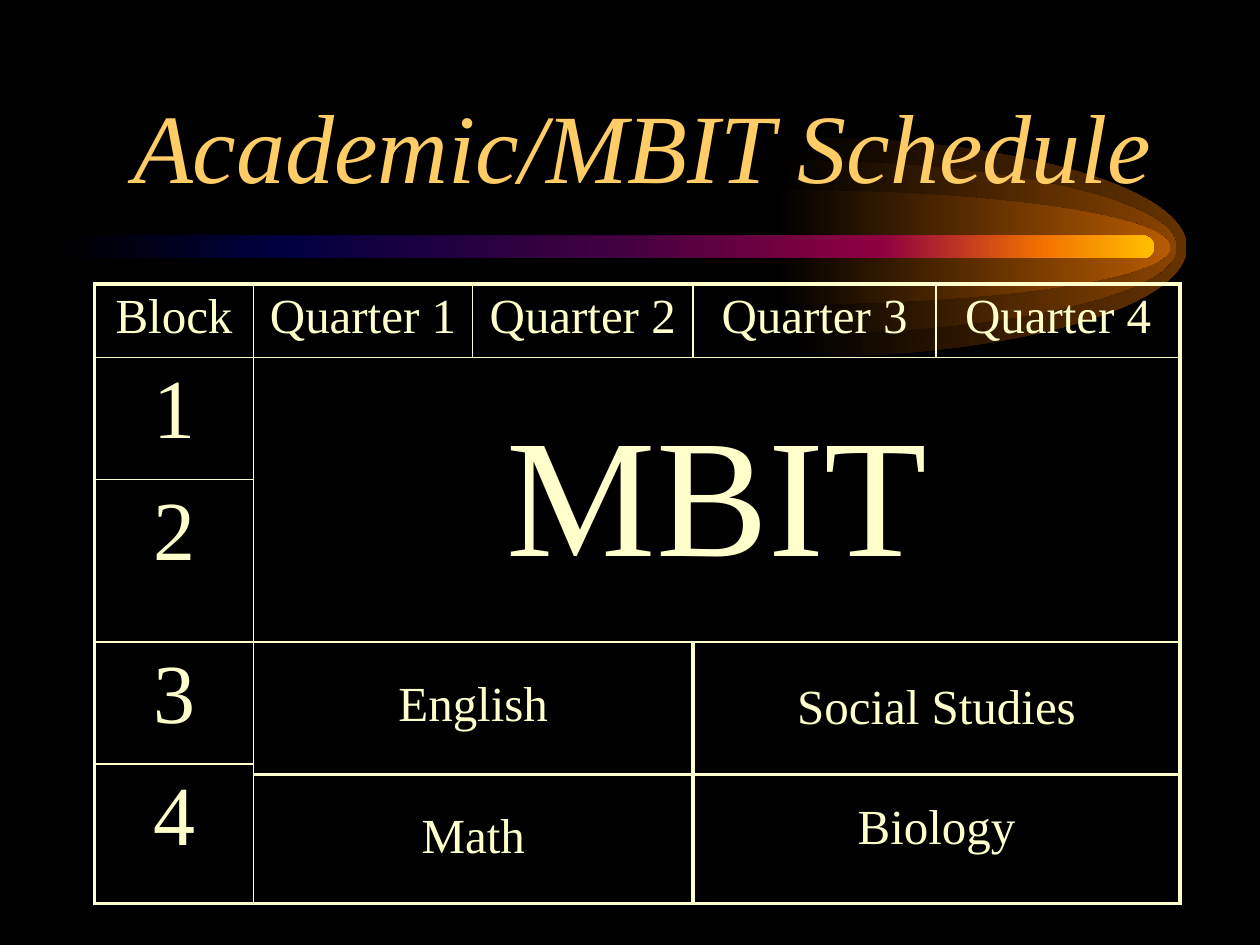
from lxml.etree import SubElement
from pptx import Presentation
from pptx.dml.color import RGBColor
from pptx.enum.shapes import MSO_SHAPE
from pptx.enum.text import MSO_ANCHOR, PP_ALIGN
from pptx.oxml.ns import qn
from pptx.util import Pt

BLACK = RGBColor(0x00, 0x00, 0x00)
GOLD = RGBColor(0xFF, 0xCC, 0x66)
CREAM = RGBColor(0xFF, 0xFF, 0xCC)
DARK_BROWN = RGBColor(0x66, 0x33, 0x00)
BROWN = RGBColor(0x89, 0x44, 0x00)
LIGHT_BROWN = RGBColor(0xB7, 0x5B, 0x00)
NAVY = RGBColor(0x00, 0x00, 0x40)
PURPLE = RGBColor(0x40, 0x00, 0x40)
CRIMSON = RGBColor(0x8F, 0x00, 0x40)
ORANGE = RGBColor(0xF2, 0x73, 0x00)
YELLOW = RGBColor(0xFF, 0xBF, 0x00)

FONT = "Times New Roman"
NO_TABLE_STYLE = "{2D5ABB26-0587-4C30-8999-92F81FD0307C}"
TITLE = "Academic/MBIT Schedule"
HEADINGS = ["Block", "Quarter 1", "Quarter 2", "Quarter 3", "Quarter 4"]

COLUMN_WIDTHS = [90.9, 125.1, 126, 139, 139.4]
ROW_HEIGHTS = [42, 69.84, 92.88, 69.84, 5.76, 74]
THIN, THICK = 1, 2.25
TOP, MIDDLE = MSO_ANCHOR.TOP, MSO_ANCHOR.MIDDLE

# text, row, column, rows, columns, size, anchor, top margin
BLOCKS = [(text, 0, column, 1, 1, 28, TOP, 3.6) for column, text in enumerate(HEADINGS)] + [
    ("1", 1, 0, 1, 1, 48, TOP, 3.6),
    ("2", 2, 0, 1, 1, 48, TOP, 3.6),
    ("3", 3, 0, 1, 1, 48, TOP, 3.6),
    ("4", 4, 0, 2, 1, 48, TOP, 3.6),
    ("MBIT", 1, 1, 2, 4, 96, MIDDLE, 3.6),
    ("English", 3, 1, 2, 2, 28, TOP, 20.4),
    ("Social Studies", 3, 3, 2, 2, 28, MIDDLE, 3.6),
    ("Math", 5, 1, 1, 2, 28, TOP, 20.2),
    ("Biology", 5, 3, 1, 2, 28, TOP, 15),
]

GLOW_MIDDLE, GLOW_REACH, ARC_HANDLE = 141.3, 225.2, 0.55
GLOWS = [(452.9, 63, DARK_BROWN), (447.1, 49.7, BROWN), (443.5, 32.7, LIGHT_BROWN)]
BAR_STOPS = [(0, BLACK), (20, NAVY), (50, PURPLE), (75, CRIMSON), (90, ORANGE), (100, YELLOW)]


def write(frame, text, size, color=CREAM, align=PP_ALIGN.CENTER, italic=False):
    para = frame.paragraphs[0]
    para.alignment = align
    span = para.add_run()
    span.text = text
    span.font.name = FONT
    span.font.size = Pt(size)
    span.font.italic = italic
    span.font.color.rgb = color


def paint_gradient(shape, stops):
    shape.shadow.inherit = False
    shape.line.fill.background()
    shape.fill.gradient()
    shape.fill.gradient_angle = 0
    stop_list = shape.element.spPr.find(qn("a:gradFill")).find(qn("a:gsLst"))
    for old_stop in list(stop_list):
        stop_list.remove(old_stop)
    for position, color in stops:
        stop = SubElement(stop_list, qn("a:gs"), pos=str(position * 1000))
        SubElement(stop, qn("a:srgbClr"), val=str(color))


def bend_lines(shape):
    lines = list(shape.element.iter(qn("a:lnTo")))
    for start in range(0, len(lines), 3):
        first, *others = lines[start:start + 3]
        outline = first.getparent()
        curve = SubElement(outline, qn("a:cubicBezTo"))
        outline.replace(first, curve)
        curve.append(first[0])
        for line in others:
            curve.append(line[0])
            outline.remove(line)


def add_glow(page, center, half_height, color):
    handle = ARC_HANDLE
    half_ellipse = [(0, -1), (handle, -1), (1, -handle), (1, 0), (1, handle), (handle, 1), (0, 1)]
    points = [(Pt(center + GLOW_REACH * x), Pt(GLOW_MIDDLE + half_height * y))
              for x, y in half_ellipse]
    builder = page.shapes.build_freeform(*points[0])
    builder.add_line_segments(points[1:], close=True)
    glow = builder.convert_to_shape()
    bend_lines(glow)
    paint_gradient(glow, [(0, BLACK), (100, color)])


def set_border(cell, side, width):
    properties = cell._tc.get_or_add_tcPr()
    line = SubElement(properties, qn("a:ln" + side), w=str(Pt(width)))
    fill = SubElement(line, qn("a:solidFill"))
    SubElement(fill, qn("a:srgbClr"), val=str(CREAM))


def vertical_width(edge, row):
    return THICK if edge in (0, 5) or (edge == 3 and row >= 3) else THIN


def horizontal_width(edge):
    return THICK if edge in (0, 5, 6) else THIN


def add_block(table, text, row, column, rows, columns, size, anchor, margin):
    bottom, right = row + rows, column + columns
    cell = table.cell(row, column)
    if rows * columns > 1:
        cell.merge(table.cell(bottom - 1, right - 1))
    set_border(cell, "L", vertical_width(column, row))
    set_border(cell, "R", vertical_width(right, row))
    set_border(cell, "T", horizontal_width(row))
    set_border(cell, "B", horizontal_width(bottom))
    cell.fill.background()
    cell.vertical_anchor = anchor
    cell.margin_top = Pt(margin)
    write(cell.text_frame, text, size)


def add_schedule(page):
    frame = page.shapes.add_table(len(ROW_HEIGHTS), len(COLUMN_WIDTHS), Pt(54), Pt(162.2),
                                  Pt(sum(COLUMN_WIDTHS)), Pt(sum(ROW_HEIGHTS)))
    table = frame.table
    table.first_row = table.horz_banding = False
    table._tbl.tblPr.find(qn("a:tableStyleId")).text = NO_TABLE_STYLE
    for column, width in zip(table.columns, COLUMN_WIDTHS):
        column.width = Pt(width)
    for row, height in zip(table.rows, ROW_HEIGHTS):
        row.height = Pt(height)
    for block in BLOCKS:
        add_block(table, *block)


def main():
    deck = Presentation()
    deck.slide_width, deck.slide_height = Pt(720), Pt(540)
    page = deck.slides.add_slide(deck.slide_layouts[6])
    page.background.fill.solid()
    page.background.fill.fore_color.rgb = BLACK

    for glow in GLOWS:
        add_glow(page, *glow)
    bar = page.shapes.add_shape(MSO_SHAPE.ROUNDED_RECTANGLE, Pt(36), Pt(134.6), Pt(623.5), Pt(13))
    bar.adjustments[0] = 0.5
    paint_gradient(bar, BAR_STOPS)

    box = page.shapes.add_textbox(Pt(53.7), Pt(29.6), Pt(612), Pt(90))
    box.text_frame.word_wrap = True
    box.text_frame.vertical_anchor = MSO_ANCHOR.BOTTOM
    write(box.text_frame, TITLE, 56, color=GOLD, align=PP_ALIGN.RIGHT, italic=True)

    add_schedule(page)
    deck.save("out.pptx")


if __name__ == "__main__":
    main()
